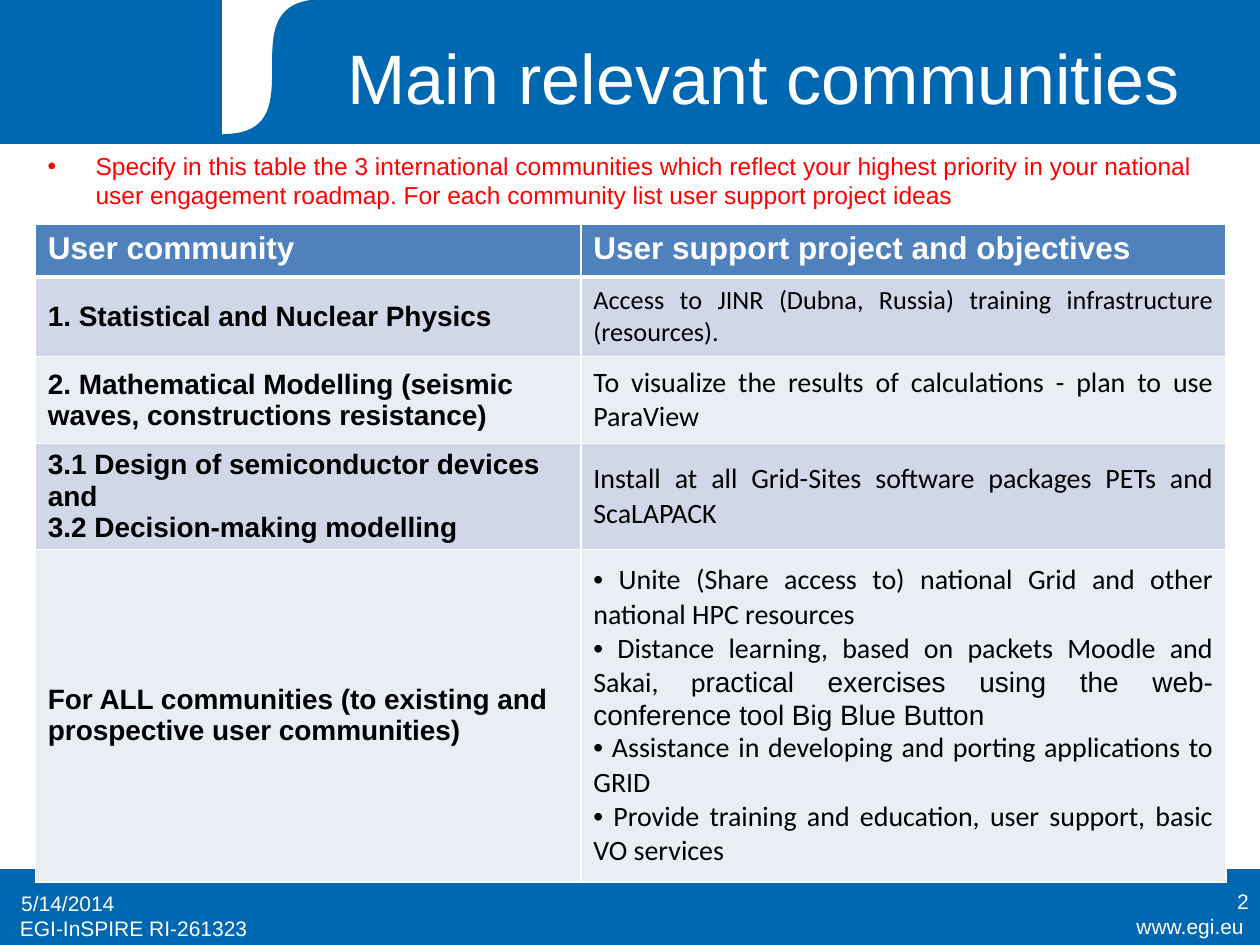
from dataclasses import dataclass

from lxml import etree
from pptx import Presentation, util as u
from pptx.dml.color import RGBColor
from pptx.enum import shapes, text
from pptx.oxml import ns

LEFT, CENTER, RIGHT, JUSTIFY = (
    text.PP_ALIGN.LEFT, text.PP_ALIGN.CENTER, text.PP_ALIGN.RIGHT, text.PP_ALIGN.JUSTIFY)
MIDDLE, TOP = text.MSO_ANCHOR.MIDDLE, text.MSO_ANCHOR.TOP


@dataclass(frozen=True)
class Theme:
    brand: str = "0067B1"
    header: str = "4F81BD"
    bands: tuple = ("D0D8E8", "E9EDF4")
    white: str = "FFFFFF"
    black: str = "000000"
    notice: str = "FF0000"
    sans: str = "Arial"
    body: str = "Calibri"
    title_size: int = 40
    header_size: int = 18
    cell_size: int = 16
    compact_size: int = 15
    notice_size: int = 14
    footer_size: int = 12


def rgb(value):
    return RGBColor.from_string(value)


def write(para, content, size, color, font="Arial", bold=False, align=LEFT, bullet=False, indent=0):
    """Fill a paragraph with text, or with (text, font) pairs, in the given format."""
    para.alignment = align
    if bullet:
        props = para._p.get_or_add_pPr()
        props.set("marL", str(u.Inches(indent)))
        props.set("indent", str(-u.Inches(indent)))
        etree.SubElement(props, ns.qn("a:buFont")).set("typeface", "Arial")
        etree.SubElement(props, ns.qn("a:buChar")).set("char", "•")
    para.font.size = u.Pt(size)
    pieces = [(content, font)] if isinstance(content, str) else content
    for words, family in pieces:
        span = para.add_run()
        span.text = words
        span.font.name, span.font.size, span.font.bold = family, u.Pt(size), bold
        span.font.color.rgb = rgb(color)


def bezier(start, first, second, end, steps=40):
    """Return points along a cubic curve."""
    points = []
    for step in range(1, steps + 1):
        t = step / steps
        weights = ((1 - t) ** 3, 3 * t * (1 - t) ** 2, 3 * t * t * (1 - t), t ** 3)
        points.append(tuple(
            sum(w * p[axis] for w, p in zip(weights, (start, first, second, end)))
            for axis in (0, 1)))
    return points


class Painter:
    """Draw styled elements on the current slide, on a grid of 100 columns by 75 rows."""

    def __init__(self, deck, theme):
        self.deck, self.theme = deck, theme
        self.page = deck.slides.add_slide(deck.slide_layouts[5])

    def col(self, count):
        return round(self.deck.slide_width * count / 100)

    def row(self, count):
        return round(self.deck.slide_height * count / 75)

    def area(self, left, top, width, height):
        return self.col(left), self.row(top), self.col(width), self.row(height)

    def paint(self, shape, color):
        shape.shadow.inherit = False
        shape.fill.solid()
        shape.fill.fore_color.rgb = rgb(color)
        shape.line.color.rgb = rgb(color)
        shape.line.width = u.Pt(0.75)

    def block(self, place, color):
        kind = shapes.MSO_SHAPE.RECTANGLE
        self.paint(self.page.shapes.add_shape(kind, *self.area(*place)), color)

    def outline(self, points, color):
        spots = [(self.col(x), self.row(y)) for x, y in points]
        builder = self.page.shapes.build_freeform(*spots[0])
        builder.add_line_segments(spots[1:], close=True)
        self.paint(builder.convert_to_shape(), color)

    def title(self, place, words):
        box = self.page.shapes.title
        box.left, box.top, box.width, box.height = self.area(*place)
        box.text_frame.vertical_anchor = MIDDLE
        write(box.text_frame.paragraphs[0], words, self.theme.title_size,
              self.theme.white, align=CENTER)
        box.element.getparent().append(box.element)

    def label(self, place, words, size, color, anchor=TOP, **style):
        box = self.page.shapes.add_textbox(*self.area(*place))
        box.text_frame.word_wrap = True
        box.text_frame.vertical_anchor = anchor
        write(box.text_frame.paragraphs[0], words, size, color, **style)

    def borders(self, cell, bottom):
        props = cell._tc.get_or_add_tcPr()
        sides = (("a:lnL", 1), ("a:lnR", 1), ("a:lnT", 1), ("a:lnB", bottom))
        for index, (side, width) in enumerate(sides):
            line = etree.Element(ns.qn(side))
            line.set("w", str(u.Pt(width)))
            fill = etree.SubElement(line, ns.qn("a:solidFill"))
            etree.SubElement(fill, ns.qn("a:srgbClr")).set("val", self.theme.white)
            props.insert(index, line)

    def cell(self, cell, paragraphs, fill, anchor=MIDDLE, bottom=1, **style):
        cell.fill.solid()
        cell.fill.fore_color.rgb = rgb(fill)
        cell.vertical_anchor = anchor
        self.borders(cell, bottom)
        for index, content in enumerate(paragraphs):
            frame = cell.text_frame
            para = frame.add_paragraph() if index else frame.paragraphs[0]
            write(para, content, **style)

    def table(self, place, widths, heights, headings, records):
        theme = self.theme
        grid = self.page.shapes.add_table(
            len(heights), len(widths), *self.area(*place)).table
        for column, width in zip(grid.columns, widths):
            column.width = self.col(width)
        for line, height in zip(grid.rows, heights):
            line.height = self.row(height)
        for index, heading in enumerate(headings):
            self.cell(grid.cell(0, index), [heading], theme.header, anchor=TOP, bottom=3,
                      size=theme.header_size, color=theme.white, bold=True)
        for index, (community, projects, size) in enumerate(records):
            fill = theme.bands[index % 2]
            self.cell(grid.cell(index + 1, 0), community, fill,
                      size=theme.cell_size, color=theme.black, bold=True)
            self.cell(grid.cell(index + 1, 1), projects, fill, size=size, color=theme.black,
                      font=theme.body, align=JUSTIFY, bullet=len(projects) > 1)


def main():
    theme = Theme()
    deck = Presentation()
    deck.slide_width, deck.slide_height = u.Inches(10), u.Inches(7.5)
    slide = Painter(deck, theme)

    slide.block((0, 69, 100, 6), theme.brand)
    slide.block((0, 0, 100, 11.4), theme.brand)
    slide.block((17.7, 0, 19.7, 10.7), theme.white)
    curve = bezier((17.7, 10.7), (25.6, 10.7), (17.7, 0), (25.6, 0))
    slide.outline([(37.4, 0), (37.4, 10.7), (17.7, 10.7), *curve], theme.brand)

    footers = (
        ((83.9, 72, 15.8, 3.1), "www.egi.eu", RIGHT, TOP),
        ((0.6, 72.2, 25, 3.1), "EGI-InSPIRE RI-261323", LEFT, TOP),
        ((0.7, 69.7, 23.3, 4), "5/14/2014", LEFT, MIDDLE),
        ((76.8, 69.5, 23.3, 4), "2", RIGHT, MIDDLE),
    )
    for place, words, align, anchor in footers:
        slide.label(place, words, theme.footer_size, theme.white, anchor=anchor, align=align)

    slide.title((23.2, 1.3, 74.8, 9.5), "Main relevant communities")

    records = (
        (["1. Statistical and Nuclear Physics"],
         ["Access to JINR (Dubna, Russia) training infrastructure (resources)."],
         theme.compact_size),
        (["2. Mathematical Modelling (seismic waves, constructions resistance)"],
         ["To visualize the results of calculations - plan to use ParaView"],
         theme.cell_size),
        (["3.1 Design of semiconductor devices and", "3.2 Decision-making modelling"],
         ["Install at all Grid-Sites software packages PETs and ScaLAPACK"],
         theme.cell_size),
        (["For ALL communities (to existing and prospective user communities)"],
         [" Unite (Share access to) national Grid and other national HPC resources",
          [(" Distance learning, based on packets Moodle and Sakai, p", theme.body),
           ("ractical exercises using the web-conference tool Big Blue Button", theme.sans)],
          " Assistance in developing and porting applications to GRID",
          " Provide training and education, user support, basic VO services"],
         theme.cell_size),
    )
    slide.table((2.8, 17.8, 94.5, 50.4), (43.3, 51.2), (4.2, 6.3, 6.9, 6.6, 26.4),
                ("User community", "User support project and objectives"), records)

    slide.label((2.8, 11.5, 94.5, 6.3),
                "Specify in this table the 3 international communities which reflect your "
                "highest priority in your national user engagement roadmap. For each "
                "community list user support project ideas",
                theme.notice_size, theme.notice, bullet=True, indent=0.38)
    deck.save("out.pptx")


if __name__ == "__main__":
    main()
